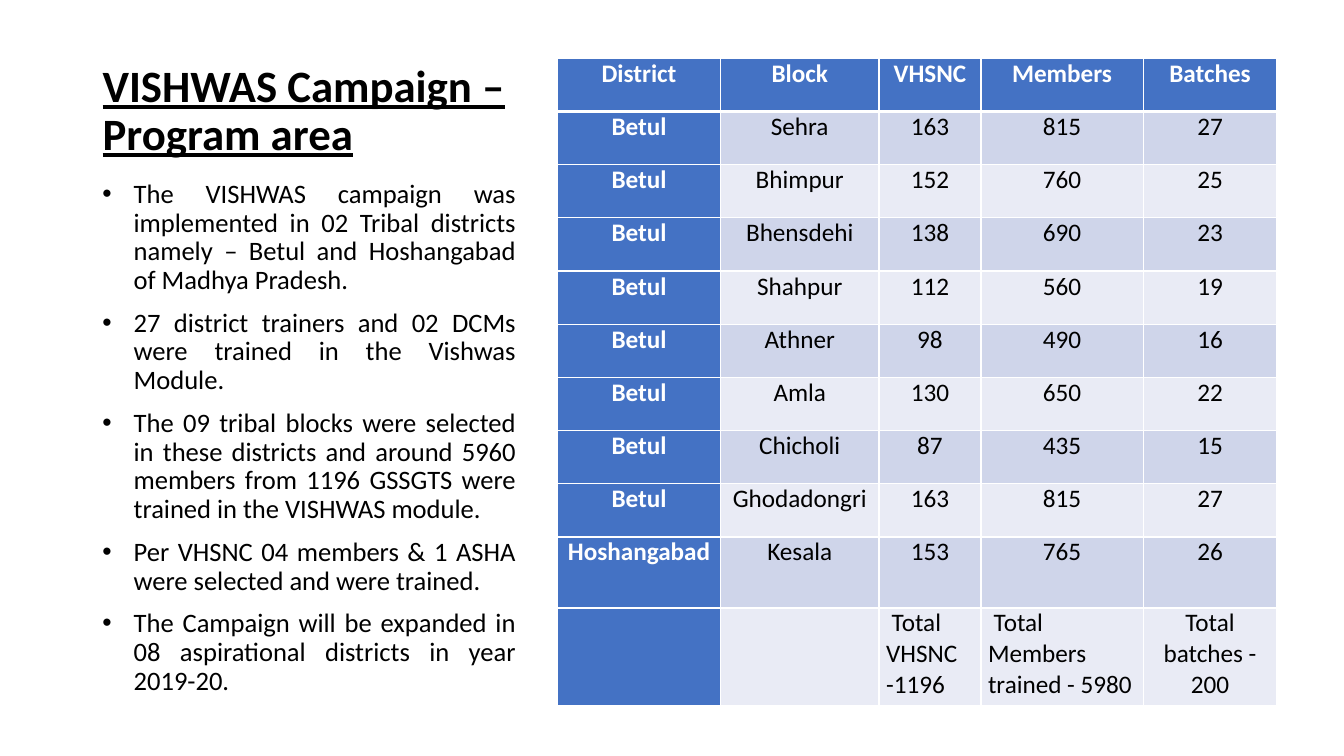
from dataclasses import dataclass

from lxml import etree
from pptx import Presentation
from pptx.dml.color import RGBColor
from pptx.enum.text import MSO_ANCHOR, MSO_AUTO_SIZE, PP_ALIGN
from pptx.oxml.ns import qn
from pptx.slide import Slide
from pptx.table import _Cell
from pptx.text.text import TextFrame, _Paragraph
from pptx.util import Cm, Pt

LEFT, CENTER, JUSTIFY = PP_ALIGN.LEFT, PP_ALIGN.CENTER, PP_ALIGN.JUSTIFY
BOTTOM, TOP = MSO_ANCHOR.BOTTOM, MSO_ANCHOR.TOP
NO_AUTOFIT = MSO_AUTO_SIZE.NONE

FONT = "Calibri"
BLACK, WHITE, BLUE = "000000", "FFFFFF", "4472C4"
BANDS = ("E9EBF5", "CFD5EA")
TEXT_LEFT, TEXT_WIDTH = 2.33, 10.92
INDENT = Cm(0.79)

TITLE = "VISHWAS Campaign – Program area"
BULLETS = (
    "The VISHWAS campaign was implemented in 02 Tribal districts namely – "
    "Betul and Hoshangabad of Madhya Pradesh.",
    "27 district trainers and 02 DCMs were trained in the Vishwas Module.",
    "The 09 tribal blocks were selected in these districts and around 5960 "
    "members from 1196 GSSGTS were trained in the VISHWAS module.",
    "Per VHSNC 04 members & 1 ASHA were selected and were trained.",
    "The Campaign will be expanded in 08 aspirational districts in year 2019-20.",
)


@dataclass(frozen=True)
class Column:
    heading: str
    width: float
    total: str = ""
    total_alignment: PP_ALIGN = CENTER


@dataclass(frozen=True)
class Block:
    district: str
    name: str
    committees: int
    members: int
    batches: int

    def texts(self) -> list[str]:
        values = (self.district, self.name, self.committees, self.members, self.batches)
        return [str(value) for value in values]


COLUMNS = (
    Column("District", 4.11),
    Column("Block", 3.99),
    Column("VHSNC", 2.57, " Total VHSNC -1196", LEFT),
    Column("Members", 4.09, " Total Members trained - 5980", LEFT),
    Column("Batches", 3.37, "Total batches - 200"),
)
BLOCKS = (
    Block("Betul", "Sehra", 163, 815, 27),
    Block("Betul", "Bhimpur", 152, 760, 25),
    Block("Betul", "Bhensdehi", 138, 690, 23),
    Block("Betul", "Shahpur", 112, 560, 19),
    Block("Betul", "Athner", 98, 490, 16),
    Block("Betul", "Amla", 130, 650, 22),
    Block("Betul", "Chicholi", 87, 435, 15),
    Block("Betul", "Ghodadongri", 163, 815, 27),
    Block("Hoshangabad", "Kesala", 153, 765, 26),
)
ROW_HEIGHTS = [1.34] * len(BLOCKS) + [1.79, 2.45]


def color(value: str) -> RGBColor:
    return RGBColor.from_string(value)


def format_runs(
    paragraph: _Paragraph, size: float, font_color: str, bold: bool = False, underline: bool = False
) -> None:
    for run in paragraph.runs:
        run.font.name = FONT
        run.font.size = Pt(size)
        run.font.bold = bold
        run.font.underline = underline
        run.font.color.rgb = color(font_color)


def prepare_frame(frame: TextFrame, anchor: MSO_ANCHOR) -> None:
    frame.word_wrap = True
    frame.auto_size = NO_AUTOFIT
    frame.vertical_anchor = anchor


def add_title(slide: Slide) -> None:
    title = slide.shapes.title
    title.left, title.top = Cm(TEXT_LEFT), Cm(-0.28)
    title.width, title.height = Cm(TEXT_WIDTH), Cm(4.45)
    prepare_frame(title.text_frame, BOTTOM)
    title.text_frame.text = TITLE
    paragraph = title.text_frame.paragraphs[0]
    paragraph.alignment = LEFT
    paragraph.line_spacing = 0.9
    format_runs(paragraph, 32, BLACK, bold=True, underline=True)


def add_bullets(slide: Slide) -> None:
    box = slide.shapes.add_textbox(Cm(TEXT_LEFT), Cm(4.42), Cm(TEXT_WIDTH), Cm(13.36))
    prepare_frame(box.text_frame, TOP)
    box.text_frame.text = "\n".join(BULLETS)
    for paragraph in box.text_frame.paragraphs:
        paragraph.alignment = JUSTIFY
        paragraph.line_spacing = 0.9
        paragraph.space_before = Pt(10)
        format_runs(paragraph, 19, BLACK)
        properties = paragraph._p.get_or_add_pPr()
        properties.set("marL", str(INDENT))
        properties.set("indent", str(-INDENT))
        etree.SubElement(properties, qn("a:buFont"), typeface="Arial")
        etree.SubElement(properties, qn("a:buChar"), char="•")


def set_borders(cell: _Cell, top: float, bottom: float) -> None:
    properties = cell._tc.get_or_add_tcPr()
    for side, width in (("L", 1), ("R", 1), ("T", top), ("B", bottom)):
        line = etree.SubElement(properties, qn(f"a:ln{side}"), w=str(Pt(width)))
        fill = etree.SubElement(line, qn("a:solidFill"))
        etree.SubElement(fill, qn("a:srgbClr"), val=WHITE)


def format_cell(cell: _Cell, row: int, column: int, text: str, alignment: PP_ALIGN) -> None:
    is_heading = row == 0 or column == 0
    cell.margin_left = cell.margin_right = Cm(0.18)
    cell.margin_top = cell.margin_bottom = 0
    set_borders(cell, top=3 if row == 1 else 1, bottom=3 if row == 0 else 1)
    cell.fill.solid()
    cell.fill.fore_color.rgb = color(BLUE if is_heading else BANDS[row % 2])
    cell.text_frame.text = text
    paragraph = cell.text_frame.paragraphs[0]
    paragraph.alignment = alignment
    format_runs(paragraph, 18, WHITE if is_heading else BLACK, bold=is_heading)


def add_block_table(slide: Slide) -> None:
    headings = [column.heading for column in COLUMNS]
    totals = [column.total for column in COLUMNS]
    rows = [headings, *(block.texts() for block in BLOCKS), totals]
    width = sum(column.width for column in COLUMNS)
    table = slide.shapes.add_table(
        len(rows), len(COLUMNS), Cm(14.05), Cm(1.47), Cm(width), Cm(sum(ROW_HEIGHTS))
    ).table
    for column_index, column in enumerate(COLUMNS):
        table.columns[column_index].width = Cm(column.width)
    for row_index, texts in enumerate(rows):
        table.rows[row_index].height = Cm(ROW_HEIGHTS[row_index])
        for column_index, text in enumerate(texts):
            is_total = row_index == len(rows) - 1
            alignment = COLUMNS[column_index].total_alignment if is_total else CENTER
            format_cell(table.cell(row_index, column_index), row_index, column_index, text, alignment)


def main() -> None:
    presentation = Presentation()
    presentation.slide_width, presentation.slide_height = Cm(33.87), Cm(19.05)
    slide = presentation.slides.add_slide(presentation.slide_layouts[5])
    add_title(slide)
    add_bullets(slide)
    add_block_table(slide)
    presentation.save("out.pptx")


if __name__ == "__main__":
    main()
